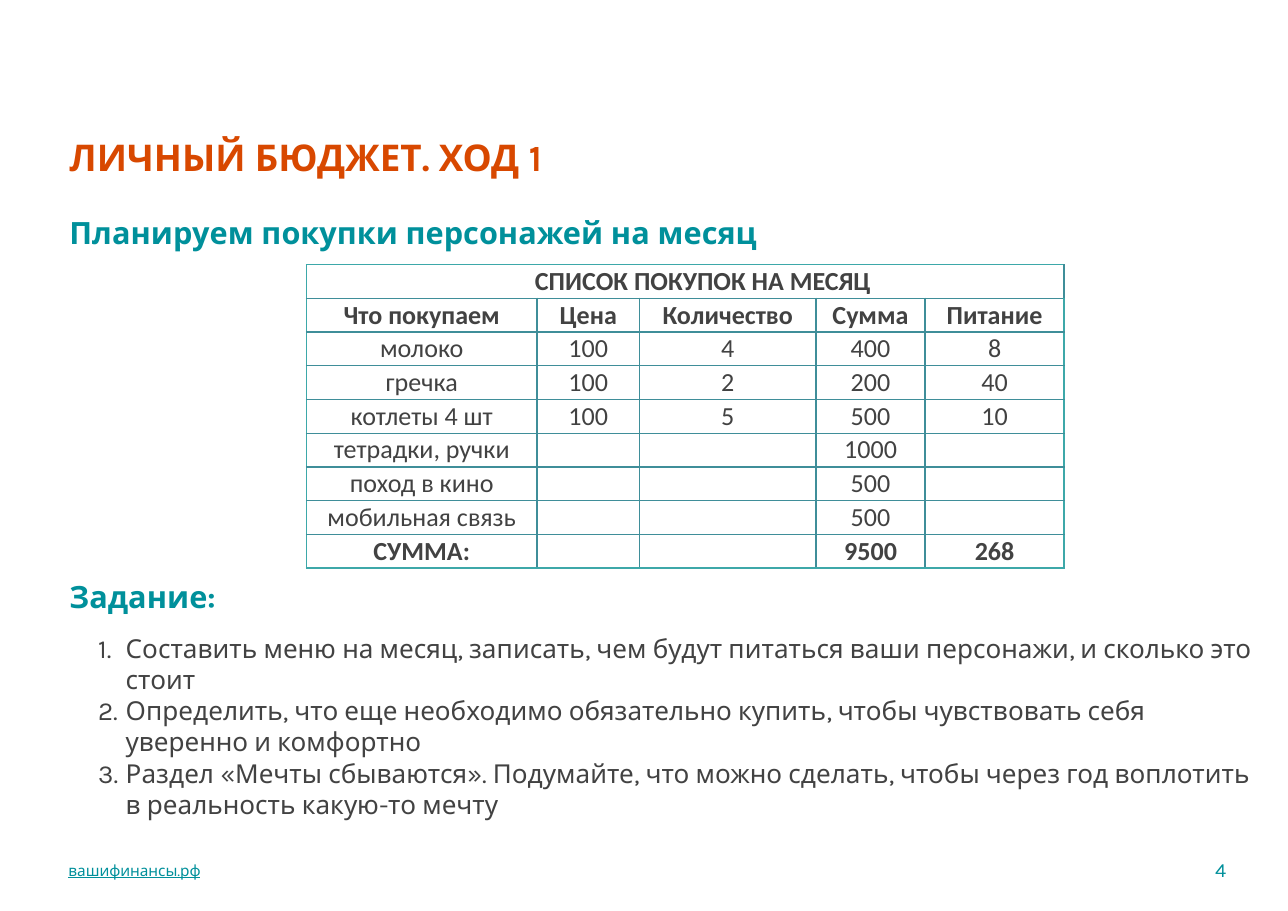
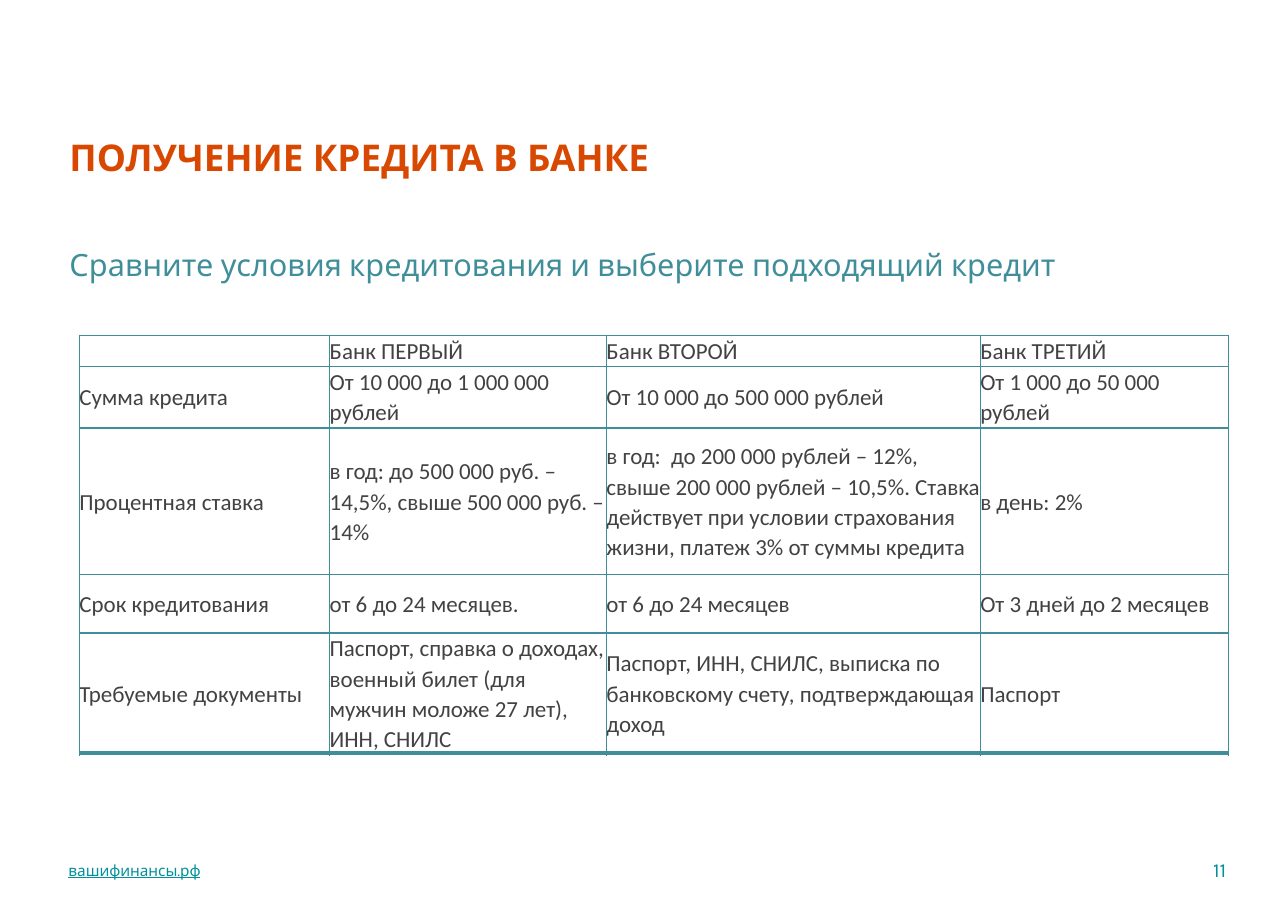
from dataclasses import dataclass

from lxml import etree
from pptx import Presentation
from pptx.dml.color import RGBColor
from pptx.enum.text import MSO_ANCHOR, MSO_AUTO_SIZE, PP_ALIGN
from pptx.oxml.ns import qn
from pptx.util import Inches, Pt

LEFT, CENTER, RIGHT = PP_ALIGN.LEFT, PP_ALIGN.CENTER, PP_ALIGN.RIGHT
TOP, MIDDLE = MSO_ANCHOR.TOP, MSO_ANCHOR.MIDDLE
NO_FIT = MSO_AUTO_SIZE.NONE
TITLE_AND_CONTENT = 1


@dataclass(frozen=True)
class Theme:
    font: str = "Karla"
    table_font: str = "Calibri"
    orange: str = "D84800"
    teal: str = "00909B"
    grid: str = "3F8E99"
    frame: str = "3DA8A9"
    ink: str = "424242"
    white: str = "FFFFFF"
    title_size: int = 24
    heading_size: int = 20
    body_size: int = 17
    compare_size: int = 15
    number_size: int = 13
    footer_size: int = 10
    inset: float = 0.05
    margin: float = 0.58
    width: float = 10.52


THEME = Theme()


def set_list_marker(paragraph, numbered):
    """Number the paragraph with a hanging indent, or clear any inherited bullet."""
    props = paragraph._p.get_or_add_pPr()
    props.set("marL", str(Inches(0.5) if numbered else 0))
    props.set("indent", str(Inches(-0.25) if numbered else 0))
    if numbered:
        etree.SubElement(props, qn("a:buFont"), typeface=THEME.font)
        etree.SubElement(props, qn("a:buAutoNum"), type="arabicPeriod")
    else:
        etree.SubElement(props, qn("a:buNone"))


def write(frame, text, *, size, color, font=THEME.font, bold=False, underline=False,
          align=LEFT, spacing=1.0, numbered=False):
    """Fill a text frame; each line of text becomes a paragraph."""
    for index, line in enumerate(text.split("\n")):
        paragraph = frame.add_paragraph() if index else frame.paragraphs[0]
        set_list_marker(paragraph, numbered)
        paragraph.alignment = align
        paragraph.line_spacing = spacing
        paragraph.space_before = Pt(0)
        if not line:
            paragraph._p.get_or_add_endParaRPr().set("sz", str(size * 100))
            continue
        run = paragraph.add_run()
        run.text = line
        run.font.name = font
        run.font.size = Pt(size)
        run.font.bold = bold
        run.font.underline = underline
        run.font.color.rgb = RGBColor.from_string(color)


def set_borders(cell, **sides):
    """Draw cell sides given as L, R, T, B = (colour, width in points)."""
    props = cell._tc.get_or_add_tcPr()
    for side in "LRTB":
        color, width = sides[side]
        line = etree.SubElement(props, qn(f"a:ln{side}"), w=str(Pt(width)))
        fill = etree.SubElement(line, qn("a:solidFill"))
        etree.SubElement(fill, qn("a:srgbClr"), val=color)


class Deck:
    def __init__(self, theme):
        self.theme = theme
        self.file = Presentation()
        self.file.slide_width = Inches(11.68)
        self.file.slide_height = Inches(8.26)
        self.slide = None

    def new_slide(self, title, number):
        t = self.theme
        layout = self.file.slide_layouts[TITLE_AND_CONTENT]
        self.slide = self.file.slides.add_slide(layout)
        self.text(title, t.margin, 1.22, t.width, 0.51, shape=self.slide.shapes.title,
                  size=t.title_size, color=t.orange, bold=True, spacing=0.9)
        self.text("вашифинансы.рф", 0.57, 7.75, 3.97, 0.28, anchor=MIDDLE,
                  size=t.footer_size, color=t.teal, underline=True)
        self.text(str(number), 10.67, 7.72, 0.5, 0.33, anchor=MIDDLE,
                  size=t.number_size, color=t.teal, align=RIGHT)

    def text(self, text, left, top, width, height, *, shape=None, anchor=TOP, **style):
        """Write into the given placeholder, or into a new text box."""
        box = [Inches(value) for value in (left, top, width, height)]
        if shape is None:
            shape = self.slide.shapes.add_textbox(*box)
        else:
            shape.left, shape.top, shape.width, shape.height = box
        frame = shape.text_frame
        frame.word_wrap = True
        frame.auto_size = NO_FIT
        frame.vertical_anchor = anchor
        frame.margin_left = frame.margin_right = Inches(self.theme.inset)
        frame.margin_top = frame.margin_bottom = Inches(self.theme.inset)
        write(frame, text, **style)

    def body(self, text, *box, **style):
        self.text(text, *box, shape=self.slide.placeholders[1], **style)

    def heading(self, text, top):
        t = self.theme
        self.text(text, t.margin, top, t.width, 0.44,
                  size=t.heading_size, color=t.teal, bold=True)

    def table(self, rows, left, top, widths, heights, *, frame_color, bottom_width=1,
              fill=None, bold_rows=(), **style):
        t = self.theme
        last_row, last_col = len(rows) - 1, len(widths) - 1
        table = self.slide.shapes.add_table(
            len(rows), len(widths), Inches(left), Inches(top),
            Inches(sum(widths)), Inches(sum(heights))).table
        table.first_row = table.horz_banding = False
        for column, width in zip(table.columns, widths):
            column.width = Inches(width)
        grid, edge = (t.grid, 1), (frame_color, 1)
        for r, (values, height) in enumerate(zip(rows, heights)):
            table.rows[r].height = Inches(height)
            for c, value in enumerate(values):
                cell = table.cell(r, c)
                cell.margin_left = cell.margin_right = 0
                cell.margin_top = cell.margin_bottom = 0
                cell.vertical_anchor = MIDDLE
                set_borders(cell,
                            L=edge if c == 0 else grid,
                            R=edge if c == last_col else grid,
                            T=edge if r == 0 else grid,
                            B=(frame_color, bottom_width) if r == last_row else grid)
                if fill:
                    cell.fill.solid()
                    cell.fill.fore_color.rgb = RGBColor.from_string(fill)
                else:
                    cell.fill.background()
                write(cell.text_frame, value, color=t.ink, font=t.table_font,
                      bold=r in bold_rows, **style)
        return table


SHOPPING = [
    ["СПИСОК ПОКУПОК НА МЕСЯЦ", "", "", "", ""],
    ["Что покупаем", "Цена", "Количество", "Сумма", "Питание"],
    ["молоко", "100", "4", "400", "8"],
    ["гречка", "100", "2", "200", "40"],
    ["котлеты 4 шт", "100", "5", "500", "10"],
    ["тетрадки, ручки", "", "", "1000", ""],
    ["поход в кино", "", "", "500", ""],
    ["мобильная связь", "", "", "500", ""],
    ["СУММА:", "", "", "9500", "268"],
]

TASKS = "\n".join([
    "Составить меню на месяц, записать, чем будут питаться ваши персонажи, и сколько это стоит",
    "Определить, что еще необходимо обязательно купить, чтобы чувствовать себя уверенно и комфортно",
    "Раздел «Мечты сбываются». Подумайте, что можно сделать, чтобы через год воплотить "
    "в реальность какую-то мечту",
])

LOANS = [
    ["", "Банк ПЕРВЫЙ", "Банк ВТОРОЙ", "Банк ТРЕТИЙ"],
    ["Сумма кредита", "От 10 000 до 1 000 000 рублей", "От 10 000 до 500 000 рублей",
     "От 1 000 до 50 000 рублей"],
    ["Процентная ставка",
     "в год: до 500 000 руб. – 14,5%, свыше 500 000 руб. – 14%",
     "в год:  до 200 000 рублей – 12%, свыше 200 000 рублей – 10,5%. Ставка действует "
     "при условии страхования жизни, платеж 3% от суммы кредита",
     "в день: 2%"],
    ["Срок кредитования", "от 6 до 24 месяцев.", "от 6 до 24 месяцев",
     "От 3 дней до 2 месяцев"],
    ["Требуемые документы",
     "Паспорт, справка о доходах, военный билет (для мужчин моложе 27 лет), ИНН, СНИЛС",
     "Паспорт, ИНН, СНИЛС, выписка по банковскому счету, подтверждающая доход",
     "Паспорт"],
]


def budget_slide(deck):
    t = deck.theme
    deck.new_slide("ЛИЧНЫЙ БЮДЖЕТ. ХОД 1", 4)
    deck.heading("Планируем покупки персонажей на месяц", 1.89)
    row_count = len(SHOPPING)
    shopping = deck.table(
        SHOPPING, 2.78, 2.4, [2.09, 0.93, 1.6, 0.99, 1.26], [2.75 / row_count] * row_count,
        frame_color=t.frame, fill=t.white, bold_rows=(0, 1, row_count - 1),
        size=t.body_size, align=CENTER)
    caption = shopping.cell(0, 0)
    caption.merge(shopping.cell(0, 4))
    caption.margin_left = Inches(0.32)
    deck.heading("Задание:", 5.19)
    deck.body(TASKS, 0.59, 5.68, 10.9, 1.85, size=t.body_size, color=t.ink, numbered=True)


def loan_slide(deck):
    t = deck.theme
    deck.new_slide("ПОЛУЧЕНИЕ КРЕДИТА В БАНКЕ", 11)
    deck.body("Сравните условия кредитования и выберите подходящий кредит",
              t.margin, 2.18, t.width, 0.56, size=t.heading_size, color=t.grid)
    deck.table(LOANS, 0.72, 3.04, [2.27, 2.51, 3.39, 2.25], [0.28, 0.56, 1.33, 0.53, 1.08],
               frame_color=t.grid, bottom_width=3, size=t.compare_size, spacing=1.07)


def main():
    deck = Deck(THEME)
    budget_slide(deck)
    loan_slide(deck)
    deck.file.save("out.pptx")


if __name__ == "__main__":
    main()
